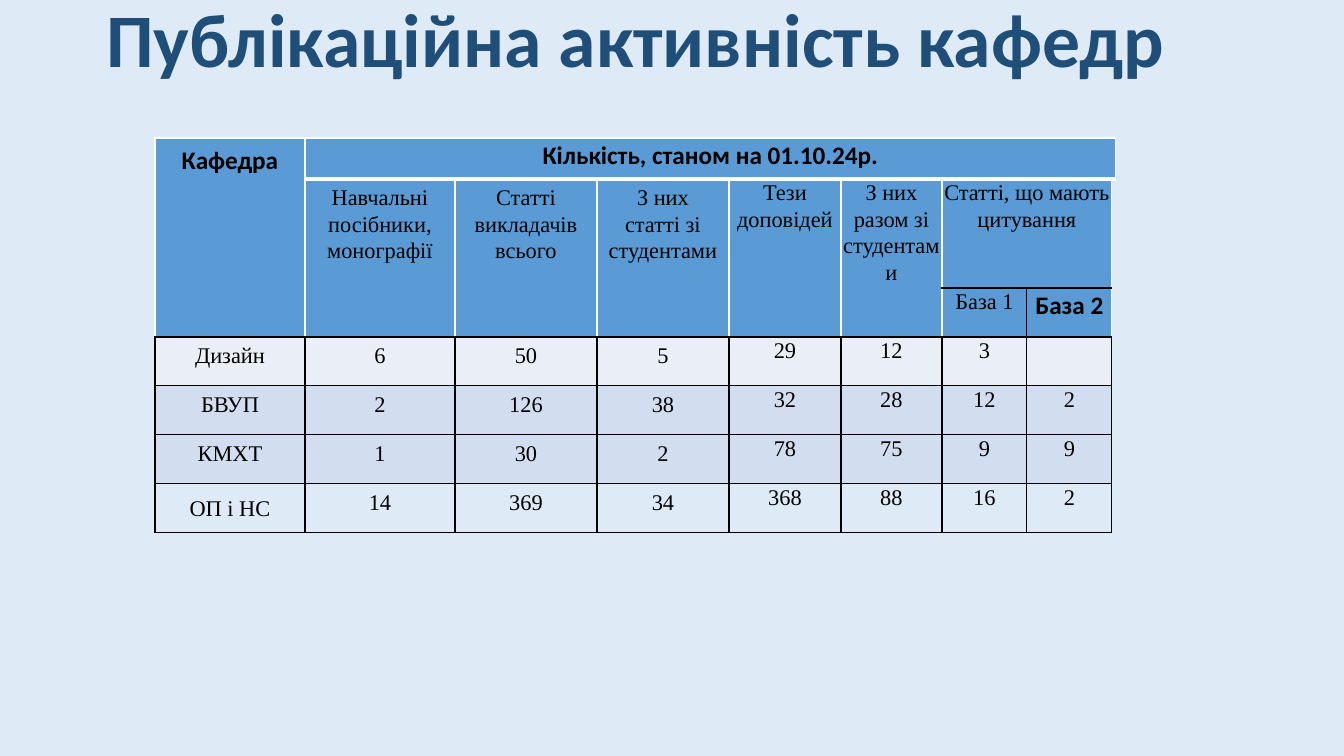
from dataclasses import dataclass

from lxml.etree import SubElement
from pptx import Presentation
from pptx.dml.color import RGBColor
from pptx.enum.text import MSO_ANCHOR, MSO_AUTO_SIZE, PP_ALIGN
from pptx.oxml.ns import qn
from pptx.util import Pt

TITLE = "Публікаційна активність кафедр"
HEADINGS = [
    (0, 0, 3, 1, "Кафедра"),
    (0, 1, 1, 8, "Кількість, станом на 01.10.24р."),
    (1, 1, 2, 1, "Навчальні посібники, монографії"),
    (1, 2, 2, 1, "Статті викладачів всього"),
    (1, 3, 2, 1, "З них статті зі студентами"),
    (1, 4, 2, 1, "Тези доповідей"),
    (1, 5, 2, 1, "З них разом зі студентами"),
    (1, 6, 1, 2, "Статті, що мають цитування"),
    (2, 6, 1, 1, "База 1"),
    (2, 7, 1, 1, "База 2"),
]
BOLD_HEADINGS = {"Кафедра", "Кількість, станом на 01.10.24р.", "База 2"}
DEPARTMENTS = [
    ("Дизайн", "6", "50", "5", "29", "12", "3", ""),
    ("БВУП", "2", "126", "38", "32", "28", "12", "2"),
    ("КМХТ", "1", "30", "2", "78", "75", "9", "9"),
    ("ОП і НС", "14", "369", "34", "368", "88", "16", "2"),
]
COLUMN_WIDTHS = [150, 150, 142, 132, 112, 101, 85, 85, 3]
ROW_HEIGHTS = [41, 109] + [49] * 5
HEADING_ROWS = 3
SPACER_COLUMN = 8
TITLE_BOX = (-8, 0, 1287, 89)
TABLE_ORIGIN = (155, 138)
PADDING = (10, 5, 10, 5)
NO_PADDING = (0, 0, 0, 0)
PLAIN_TABLE_STYLE = "{2D5ABB26-0587-4C30-8999-92F81FD0307C}"


@dataclass(frozen=True)
class Theme:
    background: str = "DEEBF7"
    title: str = "1F4E79"
    heading: str = "5B9BD5"
    body: tuple = ("EAEFF7", "D2DEEF", "D2DEEF", "DEEAF6")
    ink: str = "000000"
    white: str = "FFFFFF"
    title_size: int = 54
    strong_size: int = 18
    text_size: int = 16
    sans: str = "Calibri"
    serif: str = "Times New Roman"


THEME = Theme()


def px(length):
    return round(length * 914400 / 100.8)


def apply(target, values):
    for name, value in values.items():
        setattr(target, name, value)


def write(text_frame, text, font, size, bold, color, spacing):
    paragraph = text_frame.paragraphs[0]
    apply(paragraph, {"alignment": PP_ALIGN.CENTER, "line_spacing": spacing})
    run = paragraph.add_run()
    run.text = text
    apply(run.font, {"name": font, "size": Pt(size), "bold": bold})
    run.font.color.rgb = RGBColor.from_string(color)


def set_borders(cell, borders):
    properties = cell._tc.get_or_add_tcPr()
    for side in "LRTB":
        line = SubElement(properties, qn("a:ln" + side))
        if side not in borders:
            SubElement(line, qn("a:noFill"))
            continue
        color, width = borders[side]
        line.set("w", str(Pt(width)))
        fill = SubElement(line, qn("a:solidFill"))
        SubElement(fill, qn("a:srgbClr")).set("val", color)


def set_padding(cell, padding):
    sides = ("margin_left", "margin_top", "margin_right", "margin_bottom")
    apply(cell, dict(zip(sides, map(px, padding))))


def fill_cell(cell, text, color, borders, padding, strong=False):
    set_borders(cell, borders)
    cell.fill.solid()
    cell.fill.fore_color.rgb = RGBColor.from_string(color)
    set_padding(cell, padding)
    if text:
        font, size = (THEME.sans, THEME.strong_size) if strong else (THEME.serif, THEME.text_size)
        write(cell.text_frame, text, font, size, strong, THEME.ink, 1.07)


def heading_borders(row, column):
    white, thick, black = (THEME.white, 1), (THEME.white, 3), (THEME.ink, 1)
    return {
        "L": black if (row, column) == (2, 7) else white,
        "R": black if (row, column) == (2, 6) else white,
        "T": (white, thick, black)[row],
        "B": thick if (row, column) == (0, 1) else black,
    }


def add_title(slide):
    title = slide.shapes.title
    apply(title, dict(zip(("left", "top", "width", "height"), map(px, TITLE_BOX))))
    apply(title.text_frame, {
        "vertical_anchor": MSO_ANCHOR.BOTTOM,
        "auto_size": MSO_AUTO_SIZE.NONE,
        "word_wrap": True,
    })
    write(title.text_frame, TITLE, THEME.sans, THEME.title_size, True, THEME.title, 0.9)


def add_department_table(slide):
    size = (sum(COLUMN_WIDTHS), sum(ROW_HEIGHTS))
    frame = slide.shapes.add_table(
        len(ROW_HEIGHTS), len(COLUMN_WIDTHS), *map(px, TABLE_ORIGIN + size))
    table = frame.table
    apply(table, {"first_row": False, "horz_banding": False})
    table._tbl.tblPr.find(qn("a:tableStyleId")).text = PLAIN_TABLE_STYLE
    for column, width in zip(table.columns, COLUMN_WIDTHS):
        column.width = px(width)
    for row, height in zip(table.rows, ROW_HEIGHTS):
        row.height = px(height)

    for row, column, row_span, column_span, text in HEADINGS:
        cell = table.cell(row, column)
        if row_span * column_span > 1:
            cell.merge(table.cell(row + row_span - 1, column + column_span - 1))
        padding = PADDING if row_span > 1 and column < 4 else NO_PADDING
        fill_cell(cell, text, THEME.heading, heading_borders(row, column),
                  padding, text in BOLD_HEADINGS)

    grid = dict.fromkeys("LRTB", (THEME.ink, 1))
    for row, (values, color) in enumerate(zip(DEPARTMENTS, THEME.body), HEADING_ROWS):
        for column, value in enumerate(values):
            fill_cell(table.cell(row, column), value, color, grid,
                      PADDING if column < 4 else NO_PADDING)

    last_name = table.cell(len(ROW_HEIGHTS) - 1, 0)
    set_padding(last_name, NO_PADDING)
    last_name.vertical_anchor = MSO_ANCHOR.MIDDLE
    for row in range(1, len(ROW_HEIGHTS)):
        spacer = table.cell(row, SPACER_COLUMN)
        color = THEME.white if row < HEADING_ROWS else THEME.ink
        set_borders(spacer, {"L": (color, 1)})
        set_padding(spacer, NO_PADDING)


def main():
    presentation = Presentation()
    apply(presentation, {"slide_width": px(1344), "slide_height": px(756)})
    slide = presentation.slides.add_slide(presentation.slide_layouts[5])
    slide.background.fill.solid()
    slide.background.fill.fore_color.rgb = RGBColor.from_string(THEME.background)
    add_title(slide)
    add_department_table(slide)
    presentation.save("out.pptx")


if __name__ == "__main__":
    main()
